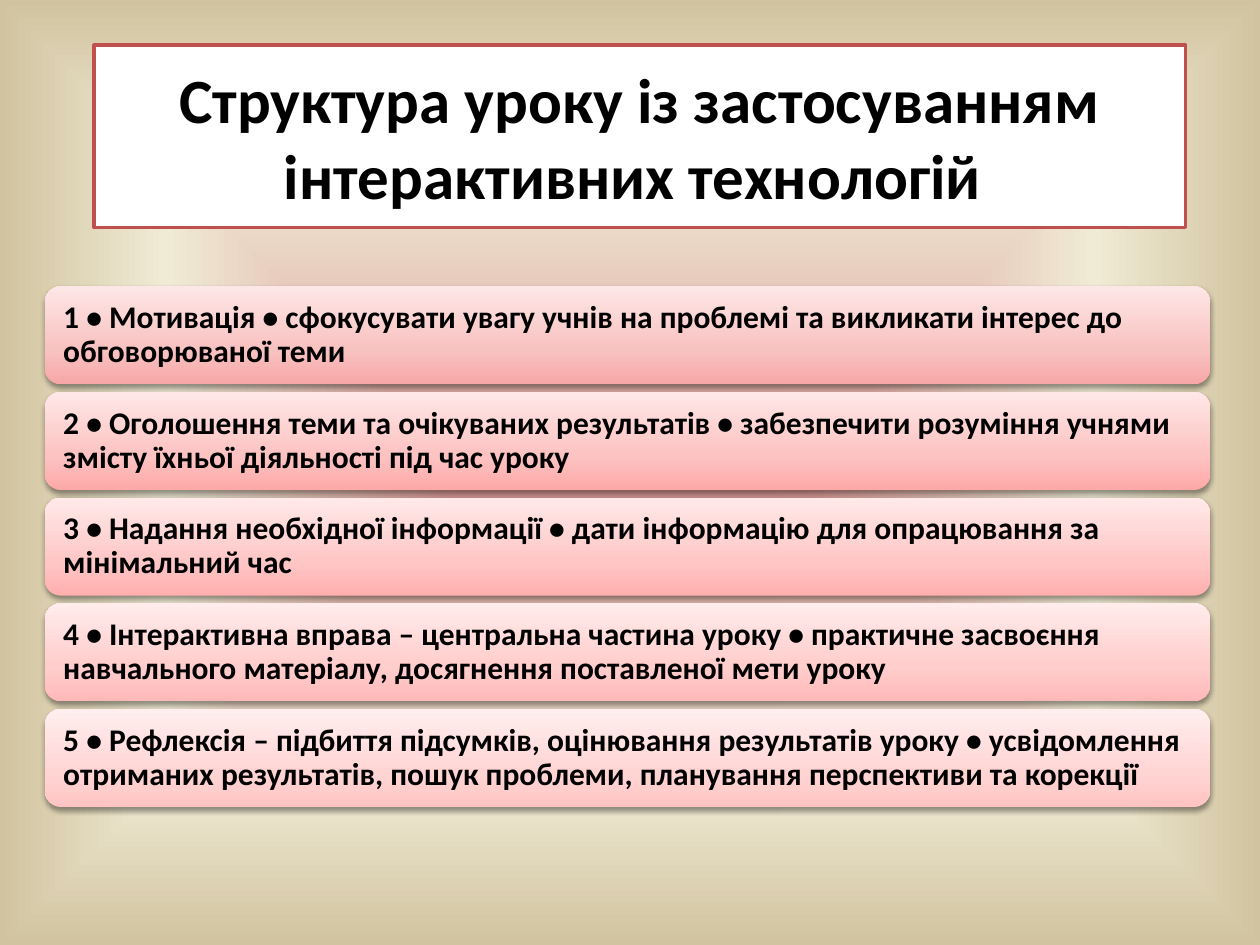
from dataclasses import dataclass

from pptx import Presentation
from pptx import util as u
from pptx.dml.color import RGBColor
from pptx.enum import shapes, text
from pptx.oxml import parse_xml
from pptx.oxml.ns import nsdecls, qn


@dataclass(frozen=True)
class Theme:
    font: str = "Calibri"
    ink: str = "000000"
    panel: str = "FFFFFF"
    border: str = "C0504D"
    title_size: int = 36
    step_size: int = 18
    background: tuple = ((0, "D99694"), (65, "F0EBD5"), (100, "D1C39F"))
    bars: tuple = (
        ("F6A7A6", "F8C2C1", "FDE7E6"),
        ("FDA9A7", "FCC3C2", "FFE7E7"),
        ("FFAFAE", "FEC7C6", "FFE9E9"),
        ("FFB9B8", "FFCDCC", "FFECEB"),
        ("FFC4C3", "FFD5D4", "FFEEEE"),
    )


THEME = Theme()
BAR_STOPS = (0, 35, 100)
UPWARD = '<a:lin ang="16200000" scaled="0"/>'
FROM_CENTRE = (
    '<a:path path="shape">'
    '<a:fillToRect l="50000" t="50000" r="50000" b="50000"/></a:path>'
)
TITLE = "Структура уроку із застосуванням інтерактивних технологій "
STEPS = (
    "1 • Мотивація • сфокусувати увагу учнів на проблемі та викликати інтерес "
    "до обговорюваної теми",
    "2 • Оголошення теми та очікуваних результатів • забезпечити розуміння "
    "учнями змісту їхньої діяльності під час уроку",
    "3 • Надання необхідної інформації • дати інформацію для опрацювання "
    "за мінімальний час",
    "4 • Інтерактивна вправа – центральна частина уроку • практичне засвоєння "
    "навчального матеріалу, досягнення поставленої мети уроку",
    "5 • Рефлексія – підбиття підсумків, оцінювання результатів уроку • "
    "усвідомлення отриманих результатів, пошук проблеми, планування "
    "перспективи та корекції",
)


def paint_gradient(fill, element, stops, direction):
    fill.gradient()
    old = element.find(".//" + qn("a:gradFill"))
    stop_xml = "".join(
        f'<a:gs pos="{position * 1000}"><a:srgbClr val="{color}"/></a:gs>'
        for position, color in stops
    )
    new = parse_xml(
        f'<a:gradFill {nsdecls("a")} rotWithShape="1">'
        f"<a:gsLst>{stop_xml}</a:gsLst>{direction}</a:gradFill>"
    )
    old.getparent().replace(old, new)


def add_soft_shadow(shape):
    shape.shadow.inherit = False
    effects = shape.element.spPr.find(qn("a:effectLst"))
    effects.append(parse_xml(
        f'<a:outerShdw {nsdecls("a")} blurRad="40000" dist="20000" '
        'dir="5400000" rotWithShape="0">'
        '<a:srgbClr val="000000"><a:alpha val="38000"/></a:srgbClr>'
        "</a:outerShdw>"
    ))


def write_text(shape, content, size, alignment):
    frame = shape.text_frame
    frame.text = content
    frame.word_wrap = True
    frame.auto_size = text.MSO_AUTO_SIZE.NONE
    frame.vertical_anchor = text.MSO_ANCHOR.MIDDLE
    paragraph = frame.paragraphs[0]
    paragraph.alignment = alignment
    font = paragraph.runs[0].font
    font.name = THEME.font
    font.size = u.Pt(size)
    font.bold = True
    font.color.rgb = RGBColor.from_string(THEME.ink)
    return frame


def format_title(title):
    title.left, title.top = u.Cm(1.9), u.Cm(0.91)
    title.width, title.height = u.Cm(22), u.Cm(3.68)
    title.element.spPr.find(qn("a:xfrm")).addnext(parse_xml(
        f'<a:prstGeom {nsdecls("a")} prst="round2DiagRect"><a:avLst/></a:prstGeom>'
    ))
    title.fill.solid()
    title.fill.fore_color.rgb = RGBColor.from_string(THEME.panel)
    title.line.color.rgb = RGBColor.from_string(THEME.border)
    title.line.width = u.Pt(2)
    write_text(title, TITLE, THEME.title_size, text.PP_ALIGN.CENTER)


def add_step(slide, top, content, colors):
    bar = slide.shapes.add_shape(
        shapes.MSO_SHAPE.ROUNDED_RECTANGLE,
        u.Cm(0.9), u.Cm(top), u.Cm(23.5), u.Cm(1.98),
    )
    paint_gradient(bar.fill, bar.element, zip(BAR_STOPS, colors), UPWARD)
    bar.line.fill.background()
    add_soft_shadow(bar)
    frame = write_text(bar, content, THEME.step_size, text.PP_ALIGN.LEFT)
    frame.margin_left = frame.margin_right = u.Cm(0.28)
    frame.margin_top = frame.margin_bottom = u.Cm(0.28)
    frame.paragraphs[0].line_spacing = 0.9


def main():
    presentation = Presentation()
    presentation.slide_width, presentation.slide_height = u.Cm(25.4), u.Cm(19.05)
    slide = presentation.slides.add_slide(presentation.slide_layouts[5])
    paint_gradient(slide.background.fill, slide.element, THEME.background, FROM_CENTRE)
    first_top, pitch = 5.77, 2.13
    for index, (content, colors) in enumerate(zip(STEPS, THEME.bars)):
        add_step(slide, first_top + index * pitch, content, colors)
    format_title(slide.shapes.title)
    presentation.save("out.pptx")


if __name__ == "__main__":
    main()
